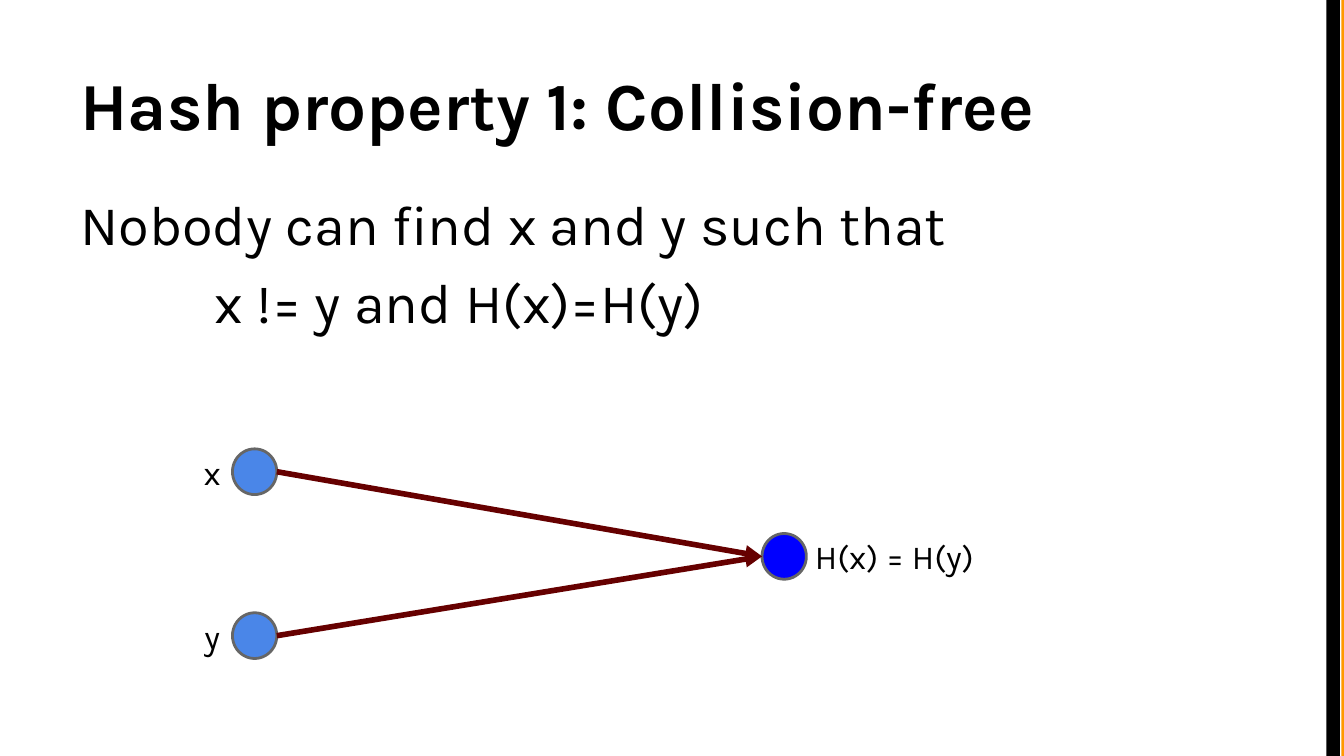
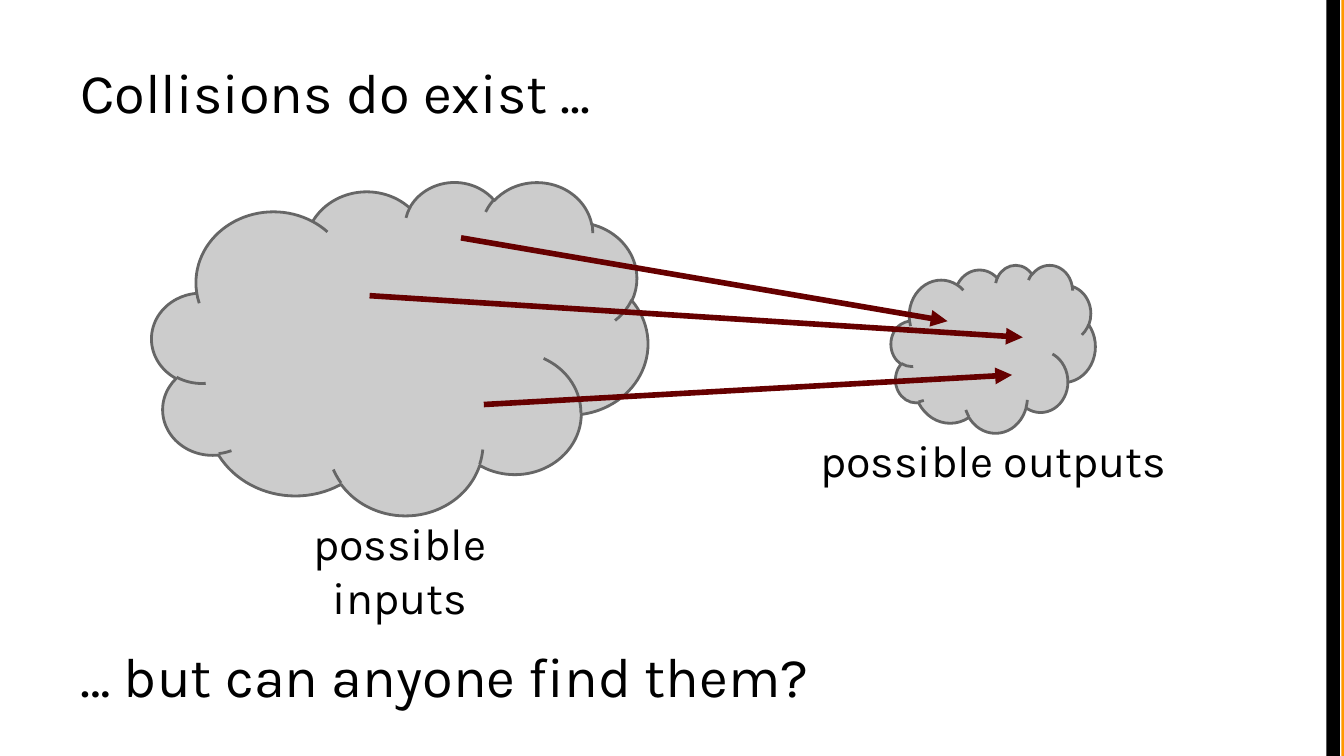
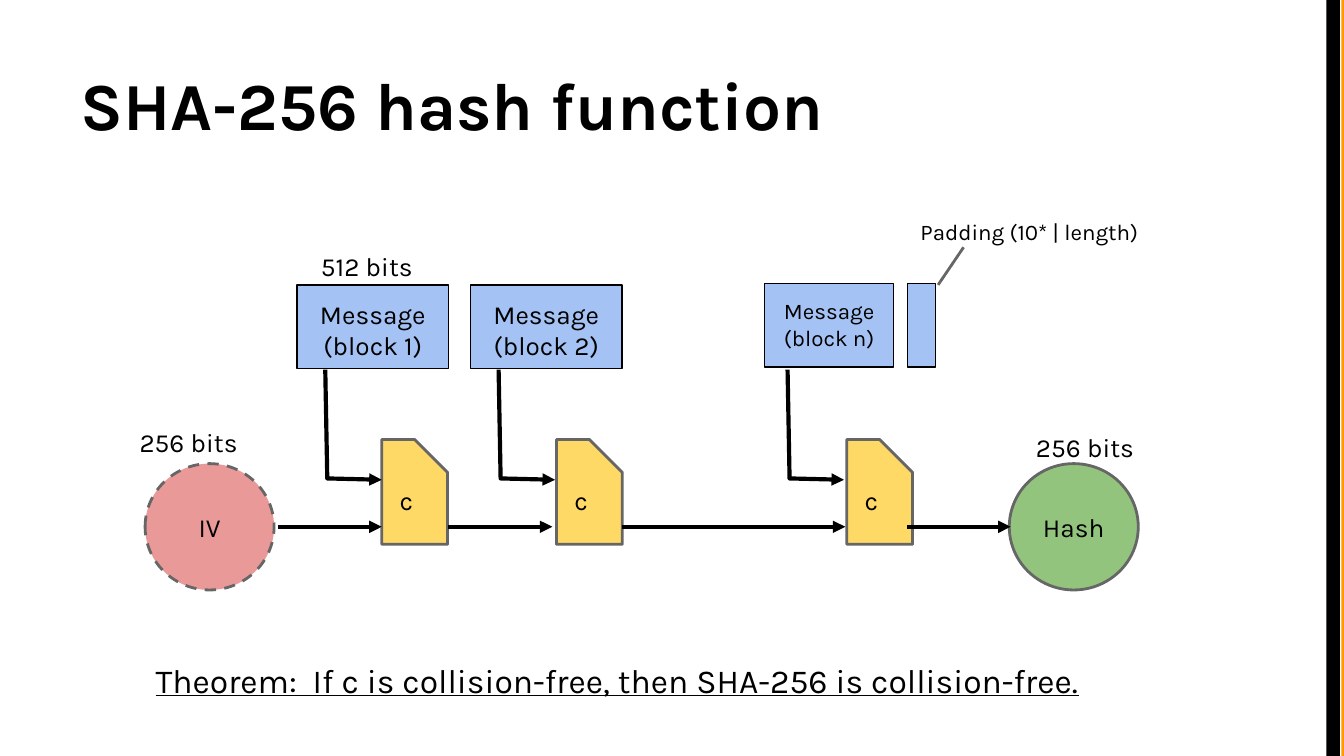
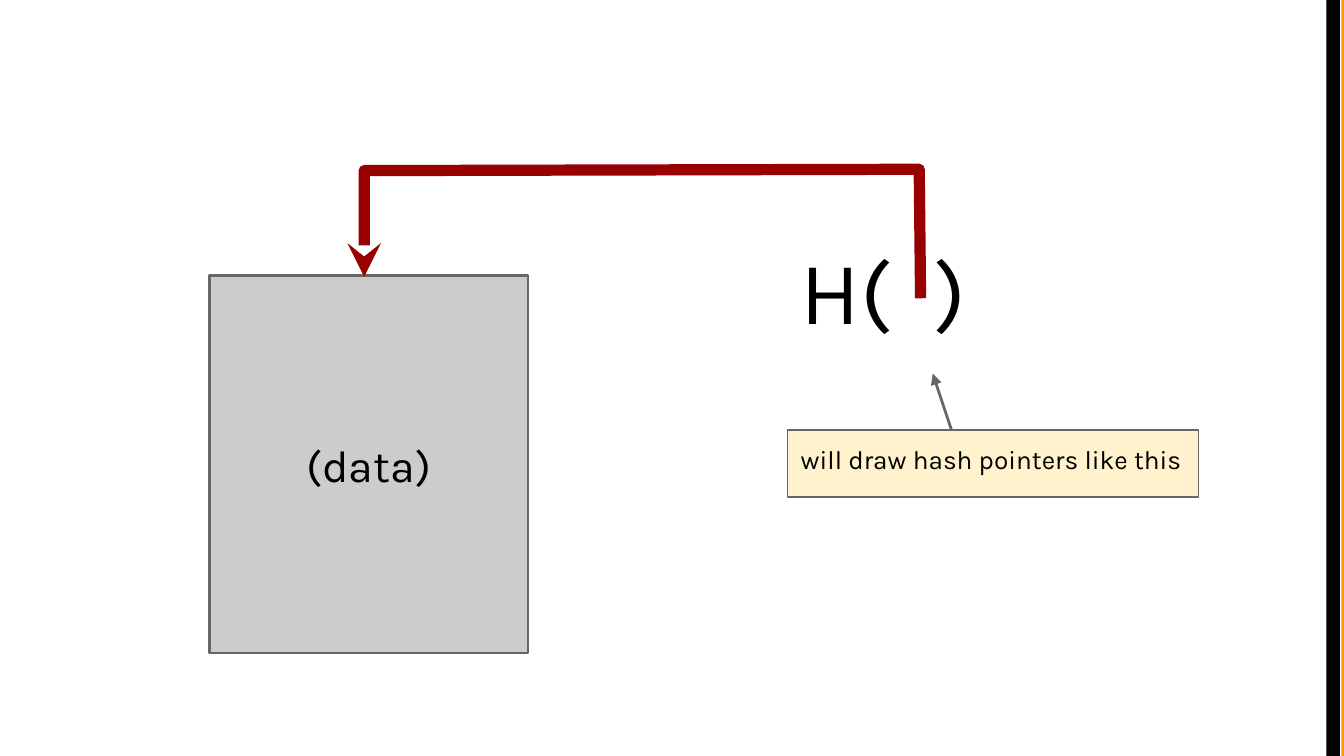
from dataclasses import dataclass

from lxml import etree
from pptx import Presentation
from pptx.dml.color import RGBColor
from pptx.enum.dml import MSO_LINE
from pptx.enum.shapes import MSO_CONNECTOR, MSO_SHAPE
from pptx.enum.text import MSO_ANCHOR, PP_ALIGN
from pptx.oxml.ns import qn
from pptx.util import Inches, Pt

RECTANGLE, OVAL, CLOUD = MSO_SHAPE.RECTANGLE, MSO_SHAPE.OVAL, MSO_SHAPE.CLOUD
SNIPPED = MSO_SHAPE.SNIP_1_RECTANGLE
STRAIGHT = MSO_CONNECTOR.STRAIGHT
DASH = MSO_LINE.DASH
LEFT, CENTER = PP_ALIGN.LEFT, PP_ALIGN.CENTER
TOP, MIDDLE, BOTTOM = MSO_ANCHOR.TOP, MSO_ANCHOR.MIDDLE, MSO_ANCHOR.BOTTOM

# The slide is a grid of square cells, a tenth of an inch each.
CELL = Inches(0.1)
COLUMNS, ROWS = 100, 56.25


@dataclass(frozen=True)
class Theme:
    font: str = "Karla"
    ink: str = "000000"
    accent: str = "FF9900"
    outline: str = "666666"
    gray: str = "CCCCCC"
    input_blue: str = "4A86E8"
    output_blue: str = "0000FF"
    mapping_red: str = "660000"
    pointer_red: str = "990000"
    message_blue: str = "A4C2F4"
    yellow: str = "FFD966"
    pink: str = "EA9999"
    green: str = "93C47D"
    note: str = "FFF2CC"
    symbol_size: int = 48
    title_size: int = 36
    body_size: int = 30
    caption_size: int = 24
    label_size: int = 18
    small_size: int = 14
    tiny_size: int = 12


THEME = Theme()

# Shared layout: left, top, width, height
TITLE_BOX = (5, 2.3, 90, 9.4)
EDGE_BANDS = [(99.8, 0.2, THEME.accent), (98.7, 1, THEME.ink)]  # left, width, colour

# Slide 1
COLLISION_TITLE = "Hash property 1: Collision-free"
COLLISION_BODY = ["Nobody can find x and y such that", "x != y and H(x)=H(y)"]
DOT_SIZE = (3.3, 3.4)
HASH_DOT = (56.7, 39.7)
HASH_LABEL = ("H(x) = H(y)", (58.9, 38.9, 15.3, 5))
INPUT_LEFT = 17.3
INPUTS = [("x", 33.4), ("y", 45.6)]  # name, top of dot

# Slide 2
STATEMENTS = [("Collisions do exist ...", 3.3), ("… but can anyone find them?", 46.7)]
CLOUDS = [  # cloud, caption, caption box
    ((11.3, 13.5, 36.9, 24.8), "possible inputs", (17, 37.4, 25.5, 5)),
    ((66.3, 19.7, 15.2, 12.5), "possible outputs", (59.8, 31.2, 28.2, 5)),
]
MAPPINGS = [
    ((34.3, 17.7), (70.5, 23.9)),
    ((36, 30.1), (75.3, 27.9)),
    ((27.5, 22), (76.1, 25.1)),
]

# Slide 3
SHA_TITLE = "SHA-256 hash function"
THEOREM = "Theorem:  If c is collision-free, then SHA-256 is collision-free."
THEOREM_BOX = (10.6, 48.1, 72.5, 5)
BIT_LABELS = [("256 bits", 9.4, 30.7), ("256 bits", 76.1, 31.1), ("512 bits", 22.9, 17.6)]
PADDING_LABEL = ("Padding (10* | length)", (67.5, 15.2, 19.6, 4))
PADDING_BLOCK = (67.5, 21.1, 2.1, 6.2)
PADDING_POINTER = ((71.7, 18.4), (69.8, 21.2))
STATES = [("IV", 10.8, THEME.pink, DASH), ("Hash", 75.1, THEME.green, None)]
STAGES = [  # block, box, type size, left of feed arrow, left of compressor
    ("(block 1)", (22.1, 21.2, 11.3, 6.2), THEME.small_size, 24.2, 28.4),
    ("(block 2)", (35, 21.2, 11.3, 6.2), THEME.small_size, 37.1, 41.4),
    ("(block n)", (56.9, 21.1, 9.6, 6.2), THEME.tiny_size, 58.6, 63),
]
FEED = [(0, 27.5), (0.15, 35.6), (4.2, 35.7)]  # column offset, row
CHAIN_ROW = 39.2
CHAIN = [(20.7, 28.4), (33.3, 41.1), (46.3, 62.9), (67.5, 75.2)]

# Slide 4
DATA = ("(data)", (15.6, 20.5, 23.7, 28.1))
HASH_SYMBOL = ("H(  )", (58.6, 16.5, 40, 5))
HASH_POINTER = [(68.5, 22.2), (68.4, 12.6), (27.1, 12.7), (27.1, 20.6)]
NOTE = ("will draw hash pointers like this", (58.6, 32, 30.6, 5))
NOTE_ARROW = ((70.8, 32), (69.4, 27.8))


def cells(*values):
    return [round(value * CELL) for value in values]


def rgb(color):
    return RGBColor.from_string(color)


def write(shape, lines, size, align=LEFT, anchor=TOP, bold=None, underline=None):
    """Fill a shape with one paragraph per line and return the paragraphs."""
    frame = shape.text_frame
    frame.word_wrap = True
    frame.vertical_anchor = anchor
    frame.margin_left = frame.margin_right = CELL
    frame.margin_top = frame.margin_bottom = CELL
    paragraphs = []
    for index, line in enumerate(lines):
        paragraph = frame.add_paragraph() if index else frame.paragraphs[0]
        paragraph.alignment = align
        run = paragraph.add_run()
        run.text = line
        font = run.font
        font.name, font.size = THEME.font, Pt(size)
        font.bold, font.underline = bold, underline
        font.color.rgb = rgb(THEME.ink)
        paragraphs.append(paragraph)
    return paragraphs


def add_text(slide, box, lines, size, **style):
    return write(slide.shapes.add_textbox(*cells(*box)), lines, size, **style)


def add_box(slide, kind, box, fill, line=THEME.outline, width=1.5, dash=None):
    shape = slide.shapes.add_shape(kind, *cells(*box))
    shape.shadow.inherit = False
    shape.fill.solid()
    shape.fill.fore_color.rgb = rgb(fill)
    if line:
        style_line(shape.line, line, width)
        shape.line.dash_style = dash
    else:
        shape.line.fill.background()
    return shape


def style_line(line, color, width, head=None):
    line.color.rgb = rgb(color)
    line.width = Pt(width)
    if head:
        etree.SubElement(line._get_or_add_ln(), qn("a:tailEnd"), type=head)


def add_line(slide, start, end, color, width, head="triangle"):
    connector = slide.shapes.add_connector(STRAIGHT, *cells(*start, *end))
    style_line(connector.line, color, width, head)
    etree.SubElement(connector._element.spPr, qn("a:effectLst"))


def add_bent_arrow(slide, points, color, width, head="triangle"):
    start, *rest = [cells(*point) for point in points]
    builder = slide.shapes.build_freeform(*start)
    builder.add_line_segments(rest, close=False)
    shape = builder.convert_to_shape()
    shape.shadow.inherit = False
    shape.fill.background()
    style_line(shape.line, color, width, head)


def add_slide(presentation, title=None):
    slide = presentation.slides.add_slide(presentation.slide_layouts[6])
    for left, width, color in EDGE_BANDS:
        add_box(slide, RECTANGLE, (left, 0, width, ROWS), color, line=None)
    if title:
        add_text(slide, TITLE_BOX, [title], THEME.title_size, anchor=BOTTOM, bold=True)
    return slide


def build_collision_free(presentation):
    slide = add_slide(presentation, COLLISION_TITLE)
    body = add_text(slide, (5, 13.1, 90, 40.7), COLLISION_BODY, THEME.body_size)
    body[1].space_before = Pt(6)
    properties = body[1]._p.get_or_add_pPr()
    for indent in ("marL", "indent"):
        properties.set(indent, str(Inches(0.5)))

    width, height = DOT_SIZE
    hash_left, hash_top = HASH_DOT
    add_box(slide, OVAL, (*HASH_DOT, *DOT_SIZE), THEME.output_blue)
    for name, top in INPUTS:
        add_box(slide, OVAL, (INPUT_LEFT, top, *DOT_SIZE), THEME.input_blue)
        add_text(slide, (INPUT_LEFT - 3.7, top - 0.8, 4.4, 5), [name],
                 THEME.label_size, align=CENTER)
        add_line(slide, (INPUT_LEFT + width, top + height / 2),
                 (hash_left, hash_top + height / 2), THEME.mapping_red, 3)
    label, box = HASH_LABEL
    add_text(slide, box, [label], THEME.label_size, align=CENTER)


def build_collisions_exist(presentation):
    slide = add_slide(presentation)
    for statement, top in STATEMENTS:
        add_text(slide, (5, top, 90, 9.5), [statement], THEME.body_size)
    for cloud, caption, box in CLOUDS:
        add_box(slide, CLOUD, cloud, THEME.gray)
        add_text(slide, box, [caption], THEME.caption_size, align=CENTER)
    for start, end in MAPPINGS:
        add_line(slide, start, end, THEME.mapping_red, 3)


def build_sha256(presentation):
    slide = add_slide(presentation, SHA_TITLE)
    for label, left, top in BIT_LABELS:
        add_text(slide, (left, top, 9.6, 5), [label], THEME.small_size)
    add_text(slide, THEOREM_BOX, [THEOREM], THEME.label_size, underline=True)

    label, box = PADDING_LABEL
    add_text(slide, box, [label], THEME.tiny_size)
    add_box(slide, RECTANGLE, PADDING_BLOCK, THEME.message_blue, THEME.ink, 0.75)
    add_line(slide, *PADDING_POINTER, THEME.outline, 1.5, head=None)

    for name, left, color, dash in STATES:
        state = add_box(slide, OVAL, (left, 34.5, 9.6, 9.4), color, dash=dash)
        write(state, [name], THEME.small_size, align=CENTER, anchor=MIDDLE)
    for block, box, size, feed_left, compressor_left in STAGES:
        message = add_box(slide, RECTANGLE, box, THEME.message_blue, THEME.ink, 0.75)
        write(message, ["Message", block], size, align=CENTER)
        compressor = add_box(slide, SNIPPED, (compressor_left, 32.7, 4.9, 7.8), THEME.yellow)
        compressor.adjustments[0] = 0.5
        write(compressor, ["c"], THEME.small_size, align=CENTER, anchor=MIDDLE)
        feed = [(feed_left + offset, row) for offset, row in FEED]
        add_bent_arrow(slide, feed, THEME.ink, 2.25)
    for start, end in CHAIN:
        add_line(slide, (start, CHAIN_ROW), (end, CHAIN_ROW), THEME.ink, 2.25)


def build_hash_pointer(presentation):
    slide = add_slide(presentation)
    label, box = DATA
    data = add_box(slide, RECTANGLE, box, THEME.gray)
    write(data, [label], THEME.caption_size, align=CENTER, anchor=MIDDLE)
    label, box = HASH_SYMBOL
    add_text(slide, box, [label], THEME.symbol_size)
    add_bent_arrow(slide, HASH_POINTER, THEME.pointer_red, 6, head="stealth")
    label, box = NOTE
    note = add_box(slide, RECTANGLE, box, THEME.note, width=0.75)
    write(note, [label], THEME.small_size)
    add_line(slide, *NOTE_ARROW, THEME.outline, 1.5)


def main():
    presentation = Presentation()
    presentation.slide_width, presentation.slide_height = cells(COLUMNS, ROWS)
    build_collision_free(presentation)
    build_collisions_exist(presentation)
    build_sha256(presentation)
    build_hash_pointer(presentation)
    presentation.save("out.pptx")


if __name__ == "__main__":
    main()
